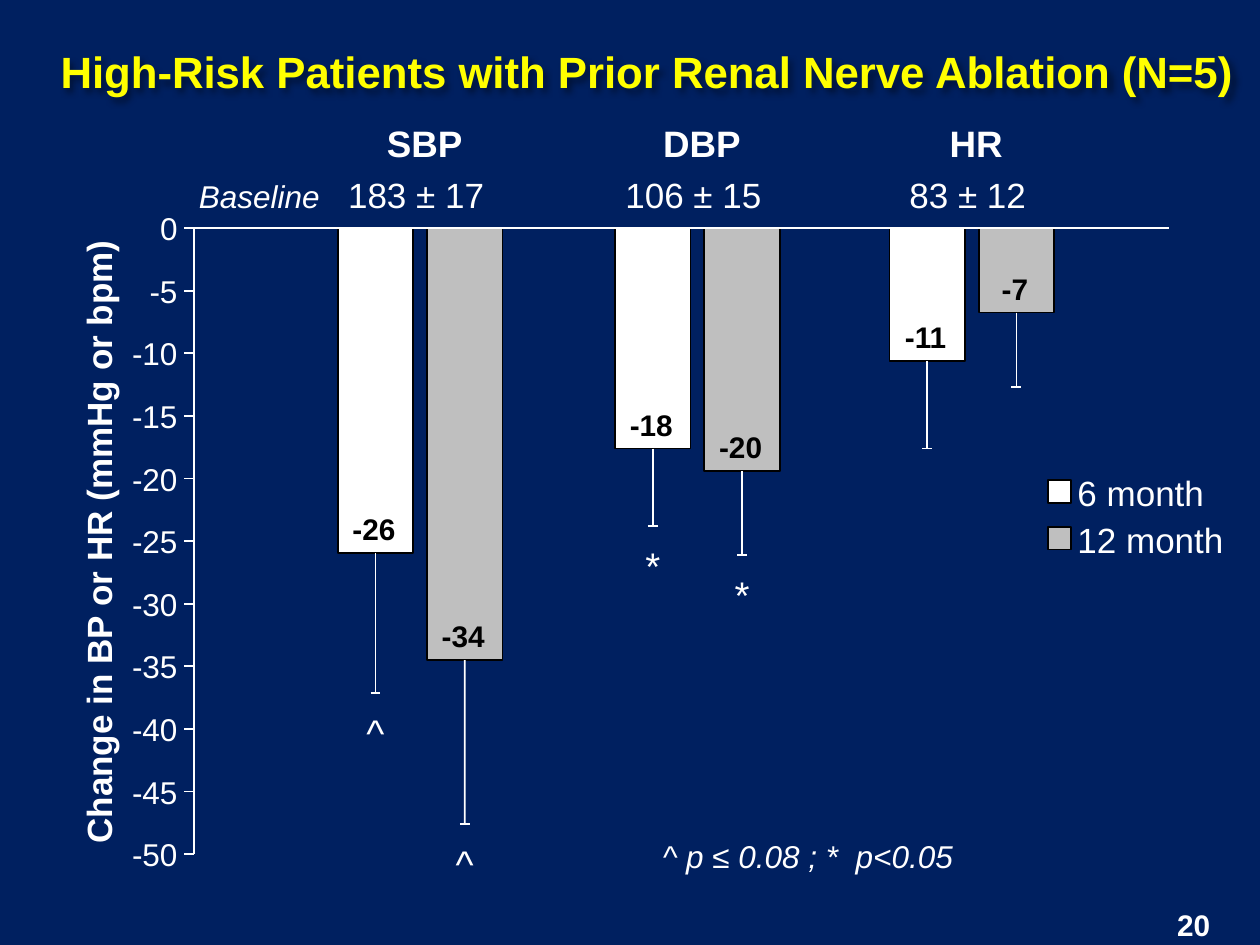
from lxml.etree import SubElement
from pptx import Presentation
from pptx.dml.color import RGBColor
from pptx.enum.shapes import MSO_CONNECTOR as Connector, MSO_SHAPE as Shape
from pptx.enum.text import MSO_ANCHOR as Anchor, MSO_AUTO_SIZE as AutoSize, PP_ALIGN as Align
from pptx.oxml import parse_xml
from pptx.oxml.ns import nsdecls, qn
from pptx.util import Cm, Pt

NAVY, WHITE, GRAY, BLACK, YELLOW = "002060", "FFFFFF", "BFBFBF", "000000", "FFFF00"

# Value axis, in cm
ZERO_Y, AXIS_X, AXIS_RIGHT = 4.6, 3.91, 23.57
LOWEST, STEP = -50, -5
UNIT = 12.62 / 50
TICK = 0.2

# Bars, in cm
BAR_WIDTH, BAR_PITCH, CAP = 1.52, 1.8, 0.1
SERIES = [("6 month", WHITE), ("12 month", GRAY)]

# Heading, baseline, left edge, then per bar: label, mean, error end, mark
GROUPS = [
    ("SBP", "183 ± 17", 6.81, [("-26", -25.95, -37.1, "^"), ("-34", -34.5, -47.6, "^")]),
    ("DBP", "106 ± 15", 12.4, [("-18", -17.6, -23.8, "*"), ("-20", -19.4, -26.1, "*")]),
    ("HR", "83 ± 12", 17.93, [("-11", -10.6, -17.6, ""), ("-7", -6.75, -12.7, "")]),
]


def color(code):
    return RGBColor.from_string(code)


def value_y(value):
    return ZERO_Y - value * UNIT


def format_text(frame, size, code, bold=False, italic=False, align=Align.LEFT):
    for paragraph in frame.paragraphs:
        paragraph.alignment = align
        for run in paragraph.runs:
            font = run.font
            font.name, font.size = "Arial", Pt(size)
            font.bold, font.italic = bold, italic
            font.color.rgb = color(code)


def add_label(slide, text, left, top, width, height, size, code=WHITE, **style):
    label = slide.shapes.add_textbox(Cm(left), Cm(top), Cm(width), Cm(height))
    frame = label.text_frame
    frame.margin_left = frame.margin_right = frame.margin_top = frame.margin_bottom = 0
    frame.word_wrap = False
    frame.vertical_anchor = Anchor.MIDDLE
    frame.text = text
    format_text(frame, size, code, **style)
    return label


def add_line(slide, x1, y1, x2, y2, weight=1):
    line = slide.shapes.add_connector(Connector.STRAIGHT, Cm(x1), Cm(y1), Cm(x2), Cm(y2))
    line.line.color.rgb = color(WHITE)
    line.line.width = Pt(weight)
    SubElement(line._element.spPr, qn("a:effectLst"))
    return line


def add_box(slide, left, top, width, height, fill):
    box = slide.shapes.add_shape(Shape.RECTANGLE, Cm(left), Cm(top), Cm(width), Cm(height))
    box.shadow.inherit = False
    box.fill.solid()
    box.fill.fore_color.rgb = color(fill)
    box.line.color.rgb = color(BLACK)
    box.line.width = Pt(1)
    return box


def add_title(slide, text):
    title = slide.shapes.title
    title.left, title.top, title.width, title.height = Cm(0.99), Cm(0.86), Cm(24.4), Cm(1.22)
    frame = title.text_frame
    frame.text = text
    frame.auto_size = AutoSize.NONE
    frame.vertical_anchor = Anchor.BOTTOM
    frame.margin_left = frame.margin_right = Cm(0.23)
    frame.margin_top = frame.margin_bottom = Cm(0.1)
    frame.paragraphs[0].line_spacing = 0.9
    format_text(frame, 25, YELLOW, bold=True)
    # Soft shadow behind the letters
    title._element.spPr.append(parse_xml(
        f'<a:effectLst {nsdecls("a")}><a:outerShdw blurRad="50800" dist="38100" dir="2700000">'
        '<a:srgbClr val="000000"><a:alpha val="40000"/></a:srgbClr>'
        '</a:outerShdw></a:effectLst>'))


def add_bar(slide, left, fill, label, mean, error_end, mark):
    bottom, end = value_y(mean), value_y(error_end)
    center = left + BAR_WIDTH / 2
    bar = add_box(slide, left, ZERO_Y, BAR_WIDTH, bottom - ZERO_Y, fill)
    whisker = add_line(slide, center, bottom, center, end)
    whisker.begin_connect(bar, 2)
    add_line(slide, center - CAP, end, center + CAP, end)
    add_label(slide, label, left - 0.03, bottom - 0.97, BAR_WIDTH, 0.97, 17, BLACK,
              bold=True, align=Align.CENTER)
    if mark:
        add_label(slide, mark, center - 0.37, end + 0.21, 0.74, 1.17, 22, align=Align.CENTER)


def add_group(slide, heading, baseline, left, bars):
    add_label(slide, heading, left + 0.75, 2.44, 2, 0.89, 21, bold=True, align=Align.CENTER)
    add_label(slide, baseline, left - 0.12, 3.5, 3.4, 0.86, 20, align=Align.CENTER)
    for index, ((_, fill), bar) in enumerate(zip(SERIES, bars)):
        add_bar(slide, left + index * BAR_PITCH, fill, *bar)


def add_axes(slide):
    add_line(slide, AXIS_X - TICK, ZERO_Y, AXIS_RIGHT, ZERO_Y, 1.5)
    add_line(slide, AXIS_X, ZERO_Y, AXIS_X, value_y(LOWEST), 1.5)
    for value in range(0, LOWEST + STEP, STEP):
        y = value_y(value)
        if value:
            add_line(slide, AXIS_X - TICK, y, AXIS_X, y)
        add_label(slide, str(value), 2.44, y - 0.38, 1.14, 0.76, 18, align=Align.RIGHT)
    name = add_label(slide, "Change in BP or HR (mmHg or bpm)", -4.65, 10.39, 13.26, 1.07, 20,
                     bold=True, align=Align.CENTER)
    name.rotation = 270


def add_legend(slide):
    for index, (name, fill) in enumerate(SERIES):
        top = 9.68 + index * 0.94
        add_box(slide, 21.13, top, 0.46, 0.46, fill)
        add_label(slide, name, 21.72, top - 0.18, 2.97, 0.86, 20)


def main():
    deck = Presentation()
    deck.slide_width, deck.slide_height = Cm(25.4), Cm(19.05)
    slide = deck.slides.add_slide(deck.slide_layouts[5])
    slide.background.fill.solid()
    slide.background.fill.fore_color.rgb = color(NAVY)

    add_title(slide, "High-Risk Patients with Prior Renal Nerve Ablation (N=5)")

    # Chart
    for group in GROUPS:
        add_group(slide, *group)
    add_axes(slide)
    add_legend(slide)

    # Notes around the chart
    add_label(slide, "Baseline", 4.01, 3.58, 2.62, 0.76, 18, italic=True)
    add_label(slide, "^ p ≤ 0.08 ; *  p<0.05", 13.36, 16.87, 6.02, 0.76, 18, italic=True)
    add_label(slide, "20", 23.6, 18.26, 0.8, 0.74, 17, bold=True, align=Align.RIGHT)

    deck.save("out.pptx")


if __name__ == "__main__":
    main()
